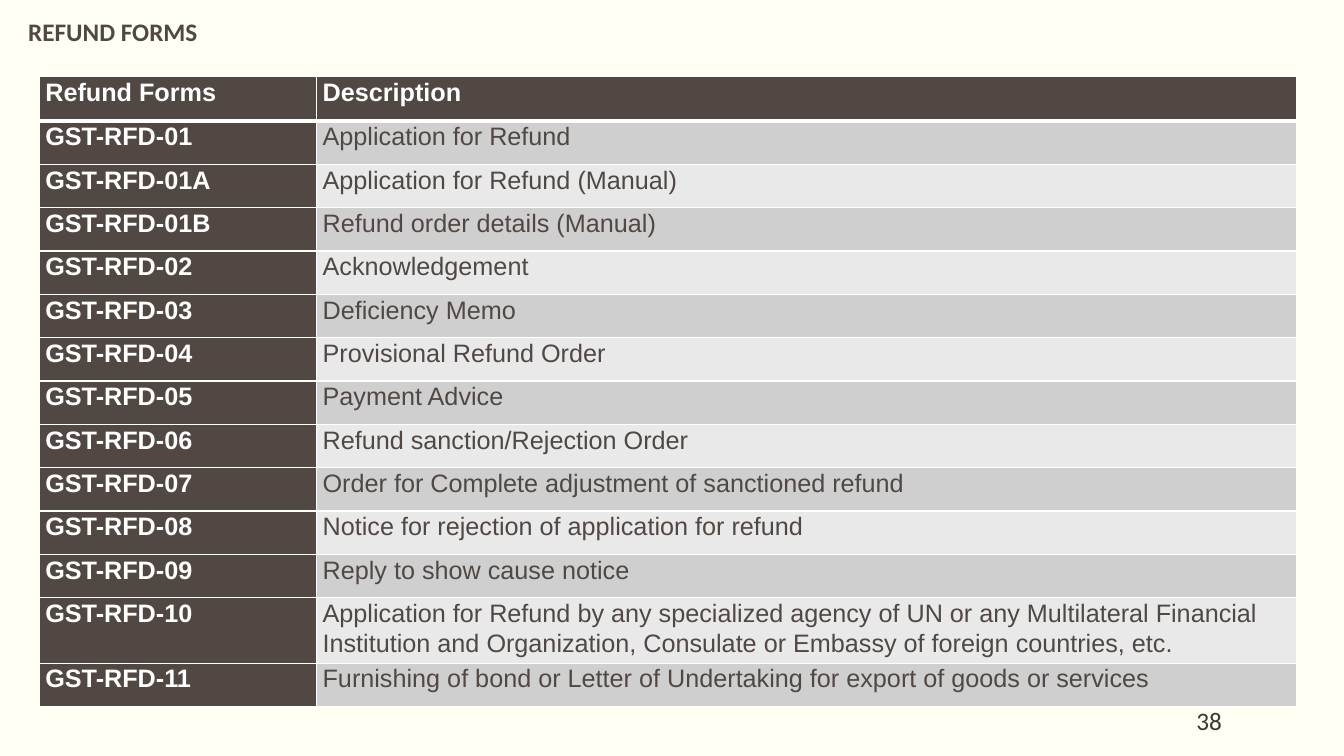
from lxml import etree
from pptx import Presentation
from pptx.dml.color import RGBColor
from pptx.enum.text import MSO_ANCHOR, PP_ALIGN
from pptx.oxml.ns import qn
from pptx.util import Inches, Pt

LEFT, RIGHT = PP_ALIGN.LEFT, PP_ALIGN.RIGHT
TOP, MIDDLE = MSO_ANCHOR.TOP, MSO_ANCHOR.MIDDLE

TITLE = "REFUND FORMS"
PAGE = "38"
ROWS = [
    ("Refund Forms", "Description"),
    ("GST-RFD-01", "Application for Refund"),
    ("GST-RFD-01A", "Application for Refund (Manual)"),
    ("GST-RFD-01B", "Refund order details (Manual)"),
    ("GST-RFD-02", "Acknowledgement"),
    ("GST-RFD-03", "Deficiency Memo"),
    ("GST-RFD-04", "Provisional Refund Order"),
    ("GST-RFD-05", "Payment Advice"),
    ("GST-RFD-06", "Refund sanction/Rejection Order"),
    ("GST-RFD-07", "Order for Complete adjustment of sanctioned refund"),
    ("GST-RFD-08", "Notice for rejection of application for refund"),
    ("GST-RFD-09", "Reply to show cause notice"),
    ("GST-RFD-10", "Application for Refund by any specialized agency of UN or any "
                   "Multilateral Financial Institution and Organization, Consulate "
                   "or Embassy of foreign countries, etc."),
    ("GST-RFD-11", "Furnishing of bond or Letter of Undertaking for export of "
                   "goods or services"),
]
COL_WIDTHS = (2.75, 9.72)
ROW_HEIGHT = 0.43
SPECIAL_HEIGHTS = {0: 0.44, 12: 0.65}

PAPER, BROWN, INK, WHITE = "FFFFF3", "514843", "3D3632", "FFFFFF"
BANDS = ("E9E9E9", "D0CFCF")


def rgb(value):
    return RGBColor.from_string(value)


def write(tf, text, font, color, bold=False, align=LEFT):
    tf.text = text
    p = tf.paragraphs[0]
    p.alignment = align
    f = p.runs[0].font
    f.name, f.size, f.bold = font, Pt(18), bold
    f.color.rgb = rgb(color)
    return p


def set_borders(cell, top, bottom):
    """Draw white cell edges; must run before the cell gets its fill."""
    tcPr = cell._tc.get_or_add_tcPr()
    for edge, width in (("L", 1), ("R", 1), ("T", top), ("B", bottom)):
        ln = etree.SubElement(tcPr, qn("a:ln" + edge), w=str(Pt(width)))
        fill = etree.SubElement(ln, qn("a:solidFill"))
        etree.SubElement(fill, qn("a:srgbClr"), val=WHITE)


prs = Presentation()
prs.slide_width, prs.slide_height = Inches(13.33), Inches(7.5)
s = prs.slides.add_slide(prs.slide_layouts[5])
s.background.fill.solid()
s.background.fill.fore_color.rgb = rgb(PAPER)

title = s.shapes.title
title.left, title.top = Inches(0.18), Inches(0.11)
title.width, title.height = Inches(5.2), Inches(0.4)
title.text_frame.vertical_anchor = TOP
write(title.text_frame, TITLE, "Calibri", BROWN, bold=True)

page = s.shapes.add_textbox(Inches(10.12), Inches(6.95), Inches(2), Inches(0.4))
tf = page.text_frame
tf.word_wrap = True
tf.vertical_anchor = MIDDLE
tf.margin_left = tf.margin_right = 0
write(tf, PAGE, "Calibri", INK, align=RIGHT)

heights = [SPECIAL_HEIGHTS.get(i, ROW_HEIGHT) for i in range(len(ROWS))]
table = s.shapes.add_table(len(ROWS), len(COL_WIDTHS), Inches(0.39), Inches(0.76),
                           Inches(sum(COL_WIDTHS)), Inches(sum(heights))).table
for column, width in zip(table.columns, COL_WIDTHS):
    column.width = Inches(width)

for i, (row, height) in enumerate(zip(ROWS, heights)):
    table.rows[i].height = Inches(height)
    for j, text in enumerate(row):
        cell = table.cell(i, j)
        heading = i == 0 or j == 0
        set_borders(cell, top=3 if i == 1 else 1, bottom=3 if i == 0 else 1)
        cell.fill.solid()
        cell.fill.fore_color.rgb = rgb(BROWN if heading else BANDS[i % 2])
        cell.margin_left = cell.margin_right = Inches(0.06)
        cell.margin_top = cell.margin_bottom = 0
        p = write(cell.text_frame, text, "Arial", WHITE if heading else BROWN, heading)
        p.line_spacing = 1.07

prs.save("out.pptx")
